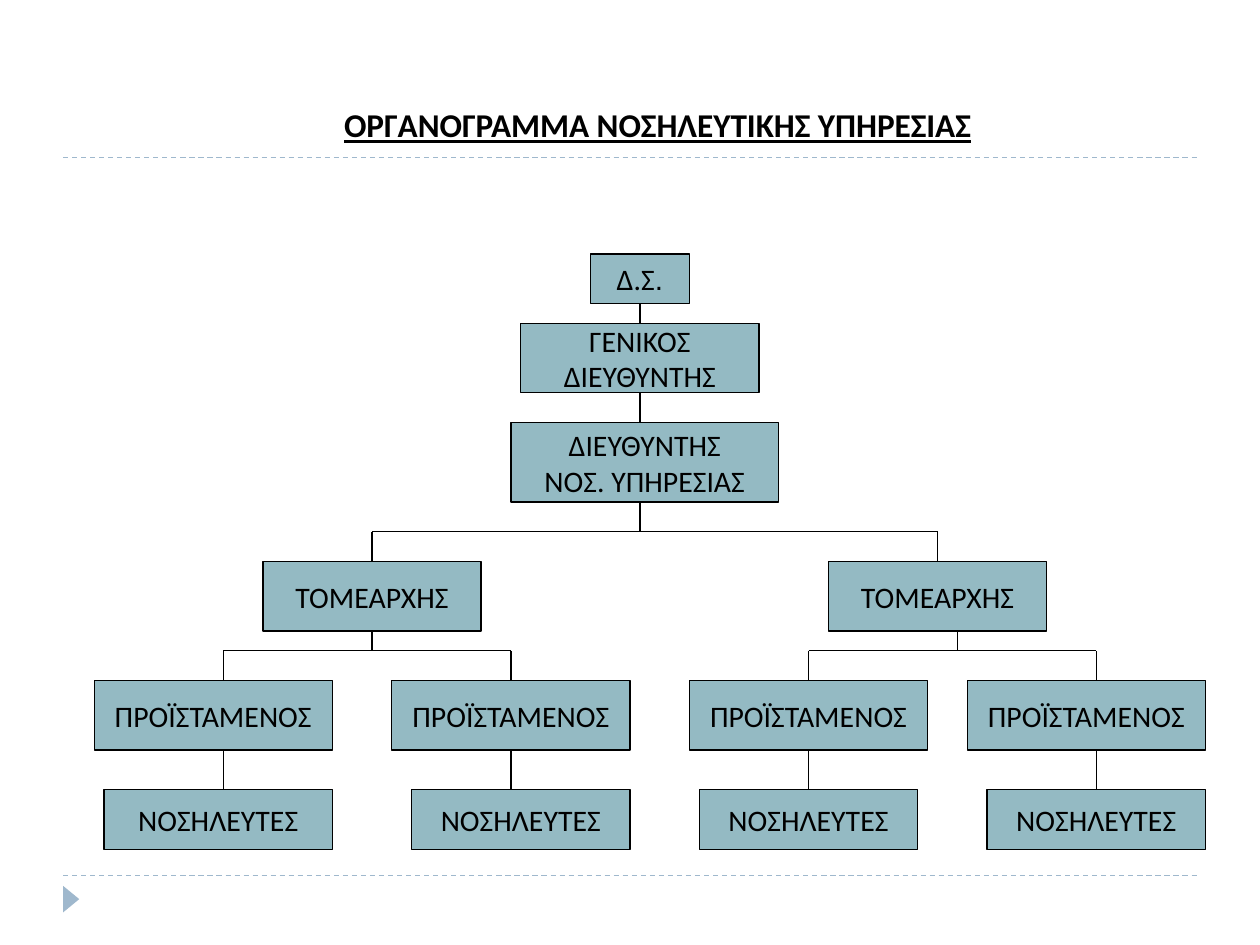
import pptx
import pptx.util
import pptx.dml.color
import pptx.enum.dml
import pptx.enum.shapes
import pptx.enum.text
import pptx.oxml.xmlchemy
import lxml.etree
from dataclasses import dataclass


@dataclass(frozen=True)
class Theme:
    box: str = "94BAC3"
    accent: str = "9FB8CD"
    ink: str = "000000"
    font: str = "Calibri"
    stop_font: str = "Arial"
    title_size: float = 19
    box_size: float = 17
    line_width: float = 0.75


T = Theme()
RGB = pptx.dml.color.RGBColor.from_string
SHAPE = pptx.enum.shapes.MSO_SHAPE
A = "http://schemas.openxmlformats.org/drawingml/2006/main"

prs = pptx.Presentation()
prs.slide_width = pptx.util.Inches(10)
prs.slide_height = pptx.util.Inches(7.5)
W, H = prs.slide_width, prs.slide_height
s = prs.slides.add_slide(prs.slide_layouts[5])

# Grid of 2 mm cells for the chart
CELL = pptx.util.Cm(0.2)
X = [round(CELL * (i + 0.5)) for i in range(125)]
Y = [round(CELL * (i + 0.6)) for i in range(90)]
sites = {}  # middle of a box's top or bottom side -> (box, site index)


def write(tf, text, size, bold=None, underline=None, stop="", wrap=False):
    """Fill a text frame, one paragraph per line; stop is a closing mark."""
    tf.word_wrap = wrap
    lines = text.split("\n")
    for i, line in enumerate(lines):
        p = tf.paragraphs[0] if i == 0 else tf.add_paragraph()
        p.alignment = pptx.enum.text.PP_ALIGN.CENTER
        runs = [(line, T.font)]
        if stop and i == len(lines) - 1:
            runs.append((stop, T.stop_font))
        for words, font in runs:
            r = p.add_run()
            r.text = words
            r.font.name, r.font.size = font, pptx.util.Pt(size)
            r.font.bold, r.font.underline = bold, underline
            r.font.color.rgb = RGB(T.ink)


def connect(x1, y1, x2, y2, color=T.ink, dash=None):
    """Draw a line and join it to any box whose side middle it meets."""
    c = s.shapes.add_connector(pptx.enum.shapes.MSO_CONNECTOR.STRAIGHT, x1, y1, x2, y2)
    c.line.color.rgb = RGB(color)
    c.line.width = pptx.util.Pt(T.line_width)
    c.line.dash_style = dash
    lxml.etree.SubElement(c._element.spPr, f"{{{A}}}effectLst")
    if (x1, y1) in sites:
        c.begin_connect(*sites[x1, y1])
    if (x2, y2) in sites:
        c.end_connect(*sites[x2, y2])


# Frame: dashed rules and corner marker
for y in (1.25, 6.95):
    y = pptx.util.Inches(y)
    connect(round(W * 0.05), y, round(W * 0.95), y, T.accent,
            pptx.enum.dml.MSO_LINE.DASH)
marker = s.shapes.add_shape(SHAPE.ISOSCELES_TRIANGLE, round(W * 0.046), round(H * 0.943),
                            round(W * 0.021), round(H * 0.017))
marker.rotation = 90
marker.shadow.inherit = False
marker.fill.solid()
marker.fill.fore_color.rgb = RGB(T.accent)
marker.line.fill.background()

# Title
title = s.shapes.title
title.left, title.top = round(W * 0.203), round(H * 0.104)
title.width, title.height = round(W * 0.638), round(H * 0.056)
write(title.text_frame, "ΟΡΓΑΝΟΓΡΑΜΜΑ ΝΟΣΗΛΕΥΤΙΚΗΣ ΥΠΗΡΕΣΙΑΣ", T.title_size,
      bold=True, underline=True, wrap=True)
title.text_frame.vertical_anchor = pptx.enum.text.MSO_ANCHOR.TOP
title.text_frame.auto_size = pptx.enum.text.MSO_AUTO_SIZE.SHAPE_TO_FIT_TEXT

# Boxes by level: text, closing mark, row, rows, (column, columns) of each box
levels = [
    ("Δ.Σ", ".", 25, 5, [(59, 10)]),
    ("ΓΕΝΙΚΟΣ\nΔΙΕΥΘΥΝΤΗΣ", "", 32, 7, [(52, 24)]),
    ("ΔΙΕΥΘΥΝΤΗΣ\nΝΟΣ. ΥΠΗΡΕΣΙΑΣ", "", 42, 8, [(51, 27)]),
    ("ΤΟΜΕΑΡΧΗΣ", "", 56, 7, [(26, 22), (83, 22)]),
    ("ΠΡΟΪΣΤΑΜΕΝΟΣ", "", 68, 7, [(9, 24), (39, 24), (69, 24), (97, 24)]),
    ("ΝΟΣΗΛΕΥΤΕΣ", "", 79, 6, [(10, 23), (41, 22), (70, 22), (99, 22)]),
]
for text, stop, row, rows, places in levels:
    for col, cols in places:
        sp = s.shapes.add_shape(SHAPE.RECTANGLE, X[col], Y[row], CELL * cols, CELL * rows)
        sp.shadow.inherit = False
        sp.fill.solid()
        sp.fill.fore_color.rgb = RGB(T.box)
        sp.line.color.rgb = RGB(T.ink)
        sp.line.width = pptx.util.Pt(T.line_width)
        sp.text_frame.vertical_anchor = pptx.enum.text.MSO_ANCHOR.MIDDLE
        write(sp.text_frame, text, T.box_size, stop=stop)
        if cols % 2 == 0:
            middle = X[col + cols // 2]
            sites[middle, Y[row]] = (sp, 0)
            sites[middle, Y[row + rows]] = (sp, 2)

# Trunk between the single boxes
for top, bottom in ((30, 32), (39, 42)):
    connect(X[64], Y[top], X[64], Y[bottom])

# Branches: stem column, stem top, bar row, row of the boxes below, their columns
branches = [
    (64, 50, 53, 56, (37, 94)),
    (37, 63, 65, 68, (22, 51)),
    (96, 63, 65, 68, (81, 110)),
]
for stem, top, bar, bottom, cols in branches:
    connect(X[stem], Y[top], X[stem], Y[bar])
    connect(X[cols[0]], Y[bar], X[cols[1]], Y[bar])
    for col in cols:
        connect(X[col], Y[bar], X[col], Y[bottom])

# Links from supervisors to nurses
for col in (22, 51, 81, 110):
    connect(X[col], Y[75], X[col], Y[79])

prs.save("out.pptx")
